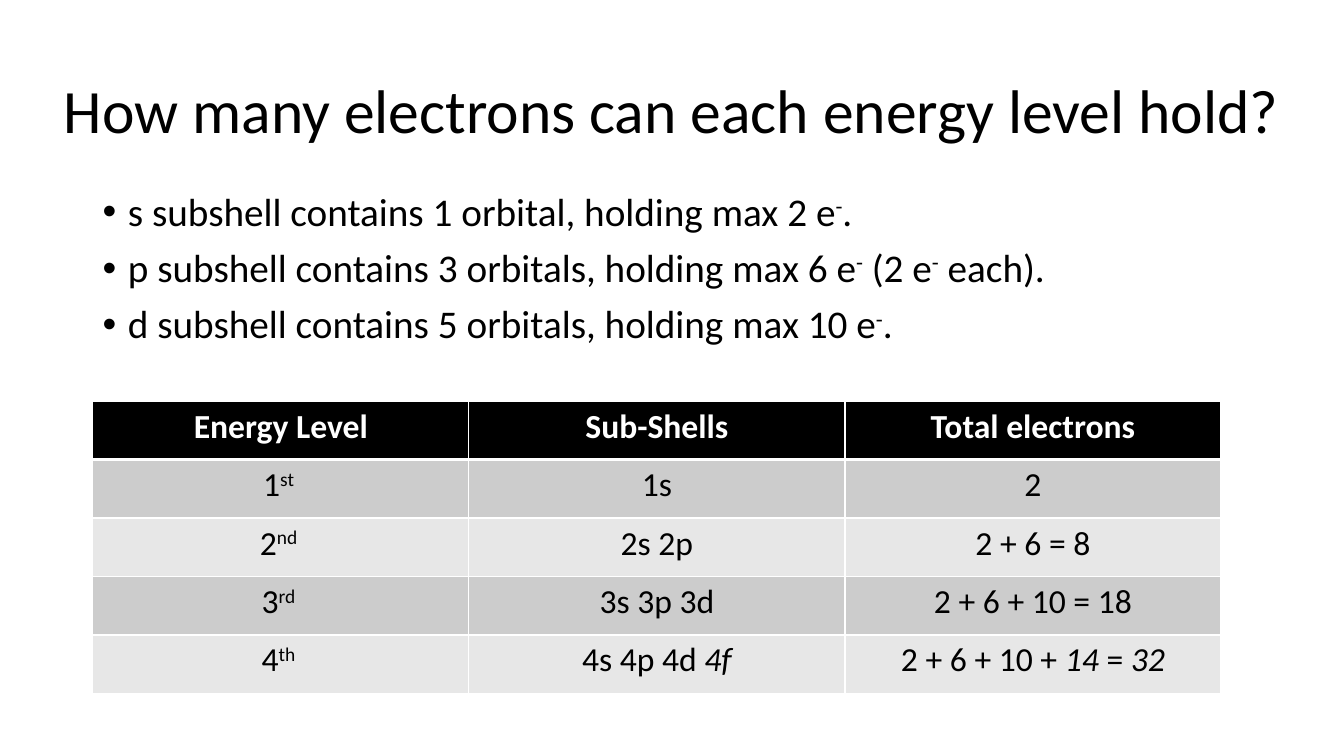
from dataclasses import dataclass

from lxml import etree
from pptx import Presentation
from pptx.dml.color import RGBColor
from pptx.enum.text import MSO_ANCHOR, PP_ALIGN
from pptx.oxml.ns import qn
from pptx.util import Inches, Pt

CENTER, LEFT = PP_ALIGN.CENTER, PP_ALIGN.LEFT
TOP, MIDDLE = MSO_ANCHOR.TOP, MSO_ANCHOR.MIDDLE
FONT = "Calibri"
COLORS = {"black": "000000", "white": "FFFFFF", "odd": "CCCCCC", "even": "E7E7E7"}


@dataclass(frozen=True)
class Run:
    text: str
    sup: bool = False
    italic: bool = False


@dataclass(frozen=True)
class Box:
    left: float
    top: float
    width: float
    height: float

    def lengths(self) -> list:
        return [Inches(v) for v in (self.left, self.top, self.width, self.height)]


TITLE_BOX = Box(0.42, 0.4, 12.49, 1.45)
BODY_BOX = Box(0.92, 1.86, 11.5, 1.66)
TABLE_BOX = Box(0.92, 3.98, 11.19, 2.9)

MINUS = Run("-", sup=True)
SUBSHELLS = [
    [Run("s subshell contains 1 orbital, holding max 2 e"), MINUS, Run(".")],
    [Run("p subshell contains 3 orbitals, holding max 6 e"), MINUS,
     Run(" (2 e"), MINUS, Run(" each).")],
    [Run("d subshell contains 5 orbitals, holding max 10 e"), MINUS, Run(".")],
]
LEVELS = [
    [[Run("Energy Level")], [Run("Sub-Shells")], [Run("Total electrons")]],
    [[Run("1"), Run("st ", sup=True)], [Run("1s")], [Run("2")]],
    [[Run("2"), Run("nd ", sup=True)], [Run("2s 2p")], [Run("2 + 6 = 8")]],
    [[Run("3"), Run("rd ", sup=True)], [Run("3s 3p 3d")], [Run("2 + 6 + 10 = 18")]],
    [[Run("4"), Run("th ", sup=True)],
     [Run("4s 4p 4d "), Run("4f", italic=True)],
     [Run("2 + 6 + 10 + "), Run("14 ", italic=True), Run("= "), Run("32", italic=True)]],
]


def add_bullet(p) -> None:
    pPr = p._p.get_or_add_pPr()
    pPr.set("marL", str(Inches(0.25)))
    pPr.set("indent", str(-Inches(0.25)))
    etree.SubElement(pPr, qn("a:buFont"), typeface="Arial")
    etree.SubElement(pPr, qn("a:buChar"), char="•")


def write(tf, paragraphs: list, *, size: float, color: str = "black", bold: bool = False,
          align=LEFT, spacing: float = 1.0, before: float = 0, bullet: bool = False) -> None:
    """Fill a text frame with paragraphs, each a list of Run."""
    tf.word_wrap = True
    for i, runs in enumerate(paragraphs):
        p = tf.paragraphs[0] if i == 0 else tf.add_paragraph()
        p.alignment = align
        p.line_spacing = spacing
        p.space_before = Pt(before)
        if bullet:
            add_bullet(p)
        for run in runs:
            r = p.add_run()
            r.text = run.text
            r.font.name = FONT
            r.font.size = Pt(size)
            r.font.bold = bold
            r.font.italic = run.italic
            r.font.color.rgb = RGBColor.from_string(COLORS[color])
            if run.sup:
                r._r.get_or_add_rPr().set("baseline", "30000")


def add_text(slide, box: Box, paragraphs: list, anchor=TOP, **text_format) -> None:
    tf = slide.shapes.add_textbox(*box.lengths()).text_frame
    tf.vertical_anchor = anchor
    write(tf, paragraphs, **text_format)


def set_borders(cell, widths: dict) -> None:
    """Draw white borders; widths maps L, R, T and B to points."""
    tcPr = cell._tc.get_or_add_tcPr()
    for side, width in widths.items():
        ln = etree.SubElement(tcPr, qn(f"a:ln{side}"), w=str(Pt(width)))
        fill = etree.SubElement(ln, qn("a:solidFill"))
        etree.SubElement(fill, qn("a:srgbClr"), val=COLORS["white"])


def add_level_table(slide, box: Box, rows: list) -> None:
    table = slide.shapes.add_table(len(rows), len(rows[0]), *box.lengths()).table
    for i, row in enumerate(rows):
        header = i == 0
        fill = "black" if header else "odd" if i % 2 else "even"
        for j, runs in enumerate(row):
            cell = table.cell(i, j)
            set_borders(cell, {"L": 1, "R": 1, "T": 3 if i == 1 else 1, "B": 3 if header else 1})
            cell.fill.solid()
            cell.fill.fore_color.rgb = RGBColor.from_string(COLORS[fill])
            write(cell.text_frame, [runs], size=24, align=CENTER, bold=header,
                  color="white" if header else "black")


def main() -> None:
    prs = Presentation()
    prs.slide_width, prs.slide_height = Inches(13.33), Inches(7.5)
    slide = prs.slides.add_slide(prs.slide_layouts[6])
    add_text(slide, TITLE_BOX, [[Run("How many electrons can each energy level hold?")]],
             anchor=MIDDLE, size=44, align=CENTER, spacing=0.9)
    add_text(slide, BODY_BOX, SUBSHELLS, size=28, spacing=0.9, before=10, bullet=True)
    add_level_table(slide, TABLE_BOX, LEVELS)
    prs.save("out.pptx")


if __name__ == "__main__":
    main()
